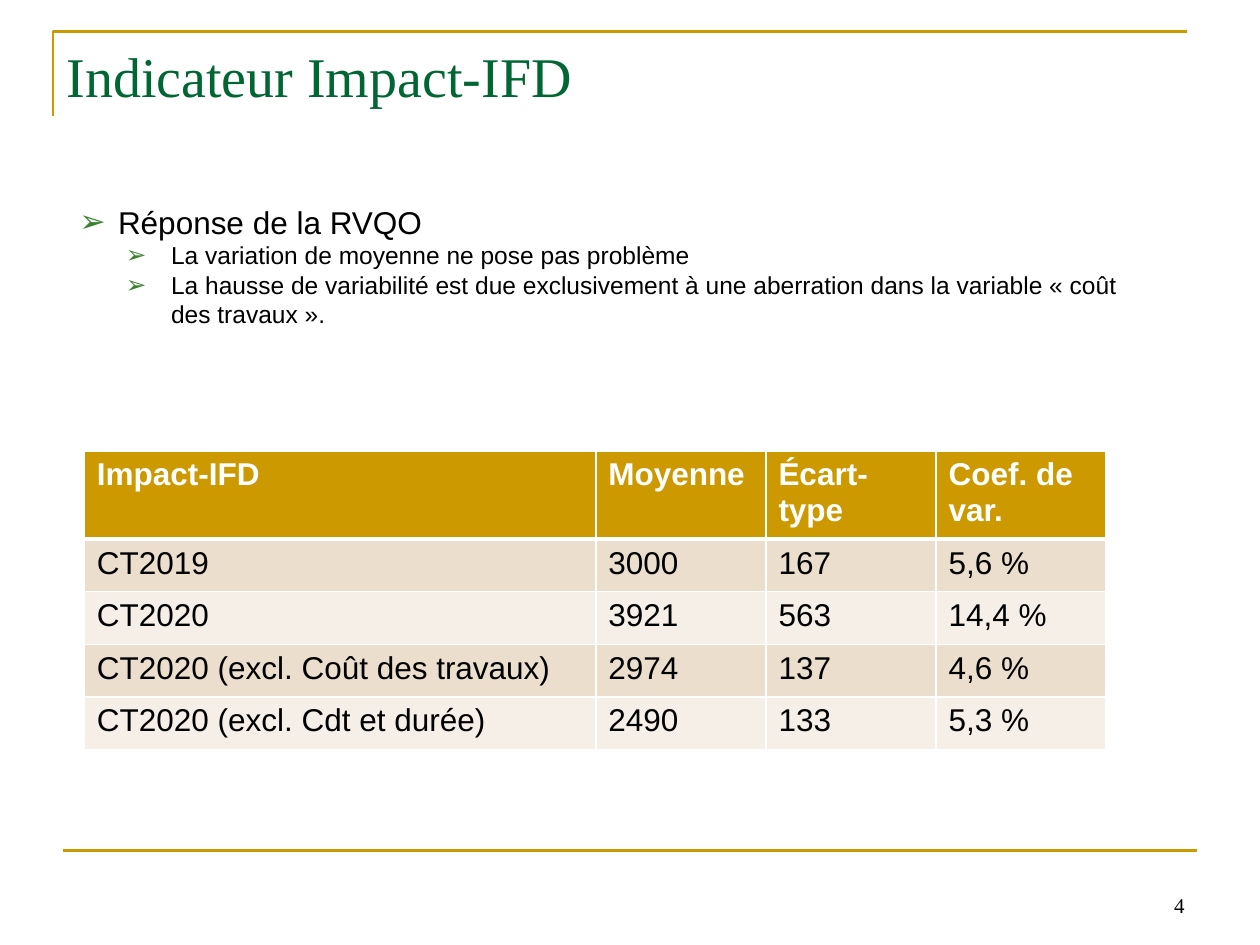
"""Build the slide on the Impact-IFD index."""
from dataclasses import dataclass

from lxml.etree import SubElement
from pptx import Presentation
from pptx.dml.color import RGBColor
from pptx.enum.shapes import MSO_CONNECTOR
from pptx.enum.text import MSO_ANCHOR, PP_ALIGN
from pptx.oxml import parse_xml
from pptx.oxml.ns import nsdecls, qn
from pptx.util import Cm, Pt


@dataclass(frozen=True)
class Theme:
    """Hold the colours, fonts and type sizes."""
    gold: str = "CC9900"
    green: str = "006633"
    leaf: str = "3B812F"
    ink: str = "000000"
    white: str = "FFFFFF"
    bands: tuple = ("ECDECC", "F6EFE7")
    serif: str = "Times New Roman"
    sans: str = "Arial"
    title: int = 32
    body: int = 18
    sub: int = 14
    foot: int = 12
    rule: float = 1.5


THEME = Theme()

POINTS = [
    ("Réponse de la RVQO", THEME.body, 0.78, 0.78),
    ("La variation de moyenne ne pose pas problème", THEME.sub, 1.85, 0.91),
    ("La hausse de variabilité est due exclusivement à une aberration dans la "
     "variable\u00a0«\u00a0coût des travaux\u00a0».", THEME.sub, 1.85, 0.91),
]

ROWS = [
    ("Impact-IFD", "Moyenne", "Écart-type", "Coef. de var."),
    ("CT2019", "3000", "167", "5,6 %"),
    ("CT2020", "3921", "563", "14,4 %"),
    ("CT2020 (excl. Coût des travaux)", "2974", "137", "4,6 %"),
    ("CT2020 (excl. Cdt et durée)", "2490", "133", "5,3 %"),
]


def apply(item, form):
    """Set each format value on the item."""
    for name, value in form.items():
        setattr(item, name, value)


def write(para, text, size, face, tint, bold=False):
    """Add one styled run to a paragraph."""
    run = para.add_run()
    run.text = text
    apply(run.font, {"size": Pt(size), "name": face, "bold": bold})
    run.font.color.rgb = RGBColor.from_string(tint)


def add_box(slide, area, **form):
    """Add a wrapping text box and return its frame."""
    frame = slide.shapes.add_textbox(*map(Cm, area)).text_frame
    apply(frame, {"word_wrap": True, **form})
    return frame


def ink_line(line):
    """Give a line the gold rule style."""
    line.color.rgb = RGBColor.from_string(THEME.gold)
    line.width = Pt(THEME.rule)


def add_corner(slide, left, top, right, foot):
    """Draw the open corner rule around the title."""
    form = slide.shapes.build_freeform(Cm(left), Cm(foot))
    form.add_line_segments([(Cm(left), Cm(top)), (Cm(right), Cm(top))], close=False)
    shape = form.convert_to_shape()
    shape.shadow.inherit = False
    shape.fill.background()
    ink_line(shape.line)


def add_rule(slide, left, right, top):
    """Draw a level rule."""
    rule = slide.shapes.add_connector(
        MSO_CONNECTOR.STRAIGHT, Cm(left), Cm(top), Cm(right), Cm(top))
    ink_line(rule.line)
    SubElement(rule._element.spPr, qn("a:effectLst"))


def add_mark(para, left, hang):
    """Give a paragraph a hanging arrow bullet."""
    props = para._p.get_or_add_pPr()
    props.set("marL", str(Cm(left)))
    props.set("indent", str(-Cm(hang)))
    tint = SubElement(props, qn("a:buClr"))
    SubElement(tint, qn("a:srgbClr"), val=THEME.leaf)
    SubElement(props, qn("a:buFont"), typeface=THEME.sans)
    SubElement(props, qn("a:buChar"), char="➢")


def add_points(slide, area):
    """Write the bullet list."""
    frame = add_box(slide, area)
    for i, (text, size, left, hang) in enumerate(POINTS):
        para = frame.add_paragraph() if i else frame.paragraphs[0]
        add_mark(para, left, hang)
        write(para, text, size, THEME.sans, THEME.ink)


def edge_cell(cell, widths):
    """Draw white borders on a cell, by side."""
    props = cell._tc.get_or_add_tcPr()
    for i, (side, width) in enumerate(widths.items()):
        props.insert(i, parse_xml(
            f'<a:ln{side} {nsdecls("a")} w="{Pt(width)}"><a:solidFill>'
            f'<a:srgbClr val="{THEME.white}"/></a:solidFill></a:ln{side}>'))


def add_grid(slide, left, top, cols, highs):
    """Build the table with its head and banded rows."""
    area = map(Cm, (left, top, sum(cols), sum(highs)))
    table = slide.shapes.add_table(len(highs), len(cols), *area).table
    for col, width in zip(table.columns, cols):
        col.width = Cm(width)
    for r, (row, high) in enumerate(zip(table.rows, highs)):
        row.height = Cm(high)
        head = r == 0
        fill = THEME.gold if head else THEME.bands[(r - 1) % 2]
        tint = THEME.white if head else THEME.ink
        edges = {"L": 1, "R": 1, "T": 3 if r == 1 else 1, "B": 3 if head else 1}
        for cell, text in zip(row.cells, ROWS[r]):
            cell.fill.solid()
            cell.fill.fore_color.rgb = RGBColor.from_string(fill)
            edge_cell(cell, edges)
            write(cell.text_frame.paragraphs[0], text, THEME.body,
                  THEME.sans, tint, head)


def main():
    """Build and save the deck."""
    deck = Presentation()
    apply(deck, {"slide_width": Cm(25.4), "slide_height": Cm(19.05)})
    slide = deck.slides.add_slide(deck.slide_layouts[6])

    add_corner(slide, 1.07, 0.64, 23.93, 2.34)
    add_rule(slide, 1.27, 24.13, 17.15)

    foot = add_box(slide, (18.21, 17.35, 5.92, 1.27),
                   vertical_anchor=MSO_ANCHOR.BOTTOM).paragraphs[0]
    foot.alignment = PP_ALIGN.RIGHT
    write(foot, "4", THEME.foot, THEME.serif, THEME.ink)

    title = add_box(slide, (1.09, 0.71, 22.86, 2.41))
    write(title.paragraphs[0], "Indicateur Impact-IFD",
          THEME.title, THEME.serif, THEME.green)

    add_points(slide, (1.35, 3.96, 22.35, 4.37))
    add_grid(slide, 1.7, 9.09, [10.31] + [3.43] * 3, [1.75] + [1.06] * 4)
    deck.save("out.pptx")


if __name__ == "__main__":
    main()
